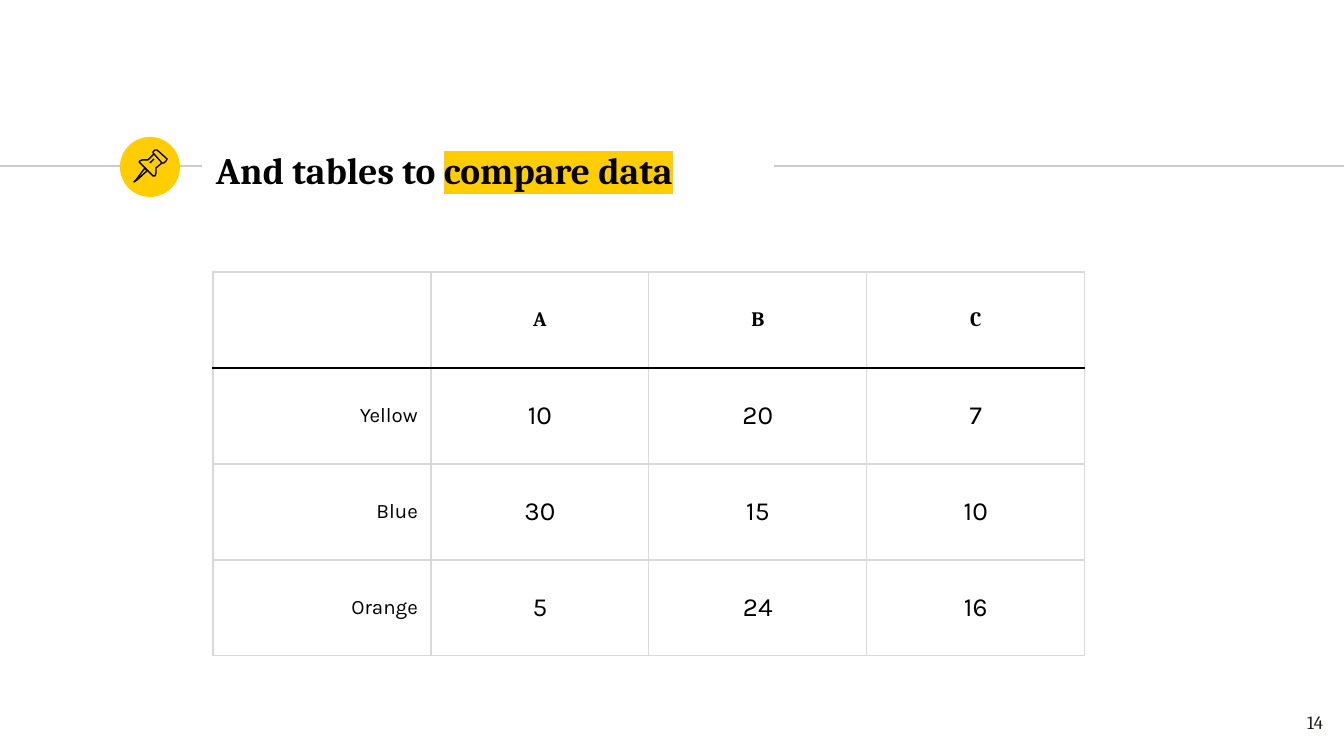
from lxml import etree
from pptx import Presentation
from pptx.dml.color import RGBColor
from pptx.enum.shapes import MSO_CONNECTOR, MSO_SHAPE
from pptx.enum.text import MSO_ANCHOR, MSO_AUTO_SIZE, PP_ALIGN
from pptx.oxml.ns import qn
from pptx.util import Pt

EMU_PER_PX = 914400 / 134.4
LEFT, CENTER, RIGHT = PP_ALIGN.LEFT, PP_ALIGN.CENTER, PP_ALIGN.RIGHT
MIDDLE, TOP = MSO_ANCHOR.MIDDLE, MSO_ANCHOR.TOP
STRAIGHT = MSO_CONNECTOR.STRAIGHT
OVAL = MSO_SHAPE.OVAL
NO_AUTOFIT = MSO_AUTO_SIZE.NONE

COLORS = {
    "black": "000000",
    "yellow": "FFCD00",
    "rule": "CCCCCC",
    "grid": "D9D9D9",
    "number": "1D1D1B",
}
SERIF, SANS = "Cambria", "Karla"
LINE_WIDTH = Pt(0.75)
TITLE_LINE_Y = 166

TABLE_ROWS = [
    ["", "A", "B", "C"],
    ["Yellow", "10", "20", "7"],
    ["Blue", "30", "15", "10"],
    ["Orange", "5", "24", "16"],
]
COLUMN_WIDTH, ROW_HEIGHT = 218, 96

# Each part of the pushpin: its points and whether the outline closes.
PIN_PARTS = [
    ([(145, 168), (136, 180), (134, 182), (137, 180), (147, 171)], True),
    ([(154, 154), (162, 163), (164, 163), (166, 161), (167, 159),
      (157, 150), (155, 150), (153, 152), (153, 153)], True),
    ([(154, 154), (148, 160), (146, 160), (142, 160), (140, 161),
      (139, 162), (153, 176), (155, 176), (156, 173), (156, 169),
      (156, 168), (162, 163)], False),
    ([(150, 163), (154, 159)], False),
]


def px(length):
    return round(length * EMU_PER_PX)


def rgb(color):
    return RGBColor.from_string(COLORS[color])


def add_text(paragraph, text, font=SERIF, size=11, color="black",
             bold=False, align=LEFT, highlight=None):
    paragraph.alignment = align
    run = paragraph.add_run()
    run.text = text
    run.font.size = Pt(size)
    run.font.bold = bold
    run.font.color.rgb = rgb(color)
    if highlight:
        marker = etree.SubElement(run.font._element, qn("a:highlight"))
        etree.SubElement(marker, qn("a:srgbClr"), val=COLORS[highlight])
    run.font.name = font


def format_frame(frame, anchor):
    frame.word_wrap = True
    frame.auto_size = NO_AUTOFIT
    frame.vertical_anchor = anchor
    frame.margin_left = frame.margin_right = px(13)
    frame.margin_top = frame.margin_bottom = px(13)


def add_rule(slide, start, end):
    rule = slide.shapes.add_connector(
        STRAIGHT, px(start), px(TITLE_LINE_Y), px(end), px(TITLE_LINE_Y))
    rule.line.color.rgb = rgb("rule")
    rule.line.width = LINE_WIDTH
    etree.SubElement(rule._element.spPr, qn("a:effectLst"))


def add_badge(slide):
    badge = slide.shapes.add_shape(OVAL, px(120), px(137), px(60), px(60))
    badge.shadow.inherit = False
    badge.fill.solid()
    badge.fill.fore_color.rgb = rgb("yellow")
    badge.line.fill.background()


def add_pin(slide):
    for points, closed in PIN_PARTS:
        builder = slide.shapes.build_freeform(*points[0], scale=EMU_PER_PX)
        builder.add_line_segments(points[1:], close=closed)
        part = builder.convert_to_shape()
        part.shadow.inherit = False
        part.fill.background()
        part.line.color.rgb = rgb("black")
        part.line.width = LINE_WIDTH


def set_title(slide):
    title = slide.shapes.title
    title.left, title.top = px(203), px(137)
    title.width, title.height = px(570), px(65)
    format_frame(title.text_frame, MIDDLE)
    heading = title.text_frame.paragraphs[0]
    add_text(heading, "And tables to ", size=20, bold=True)
    add_text(heading, "compare data", size=20, bold=True, highlight="yellow")


def set_borders(cell, **edge_colors):
    """Draw the named edges (L, R, T, B), placed before the cell's fill."""
    properties = cell._tc.get_or_add_tcPr()
    for position, (edge, color) in enumerate(edge_colors.items()):
        border = etree.Element(qn(f"a:ln{edge}"), w=str(LINE_WIDTH))
        fill = etree.SubElement(border, qn("a:solidFill"))
        etree.SubElement(fill, qn("a:srgbClr"), val=COLORS[color])
        properties.insert(position, border)


def cell_format(row, column):
    if row == 0:
        return {"bold": True, "align": CENTER}
    if column == 0:
        return {"font": SANS, "align": RIGHT}
    return {"font": SANS, "size": 14, "align": CENTER}


def add_comparison_table(slide):
    row_count, column_count = len(TABLE_ROWS), len(TABLE_ROWS[0])
    table = slide.shapes.add_table(
        row_count, column_count, px(213), px(272),
        px(COLUMN_WIDTH * column_count), px(ROW_HEIGHT * row_count)).table
    table.horz_banding = False
    table.first_row = False
    for r, values in enumerate(TABLE_ROWS):
        for c, value in enumerate(values):
            cell = table.cell(r, c)
            cell.fill.background()
            cell.vertical_anchor = MIDDLE
            cell.margin_left = cell.margin_right = px(13)
            cell.margin_top = cell.margin_bottom = px(9)
            set_borders(cell, L="grid", R="grid",
                        T="black" if r == 1 else "grid",
                        B="black" if r == 0 else "grid")
            if value:
                add_text(cell.text_frame.paragraphs[0], value,
                         **cell_format(r, c))


def add_slide_number(slide):
    number = slide.shapes.add_textbox(px(1255), px(698), px(81), px(58))
    format_frame(number.text_frame, TOP)
    add_text(number.text_frame.paragraphs[0], "14", size=10,
             color="number", align=RIGHT)


def main():
    presentation = Presentation()
    presentation.slide_width = px(1344)
    presentation.slide_height = px(756)
    slide = presentation.slides.add_slide(presentation.slide_layouts[5])
    add_rule(slide, 0, 202)
    add_badge(slide)
    add_rule(slide, 774, 1344)
    set_title(slide)
    add_comparison_table(slide)
    add_pin(slide)
    add_slide_number(slide)
    presentation.save("out.pptx")


if __name__ == "__main__":
    main()
